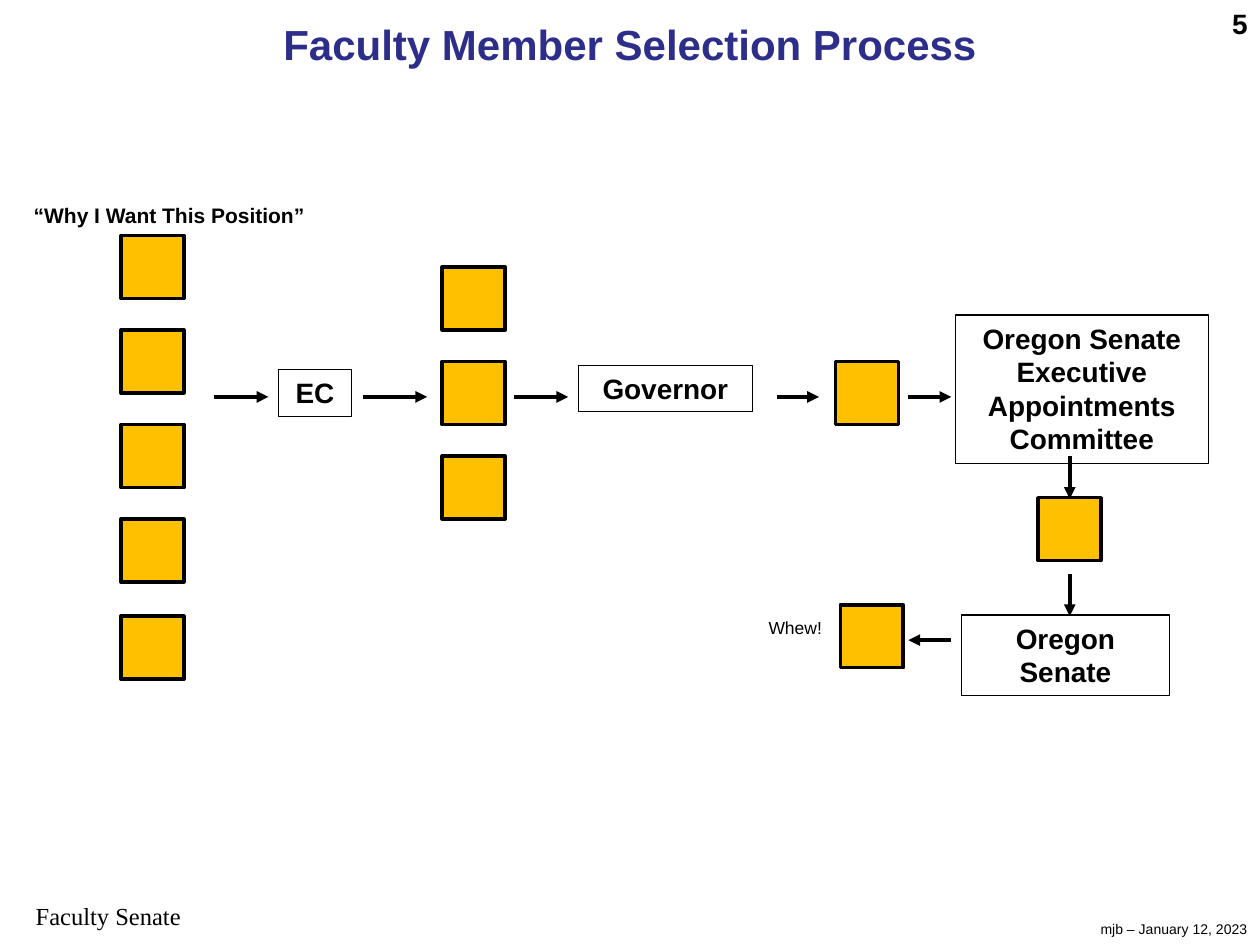
"""Build the faculty member selection process slide."""
from dataclasses import dataclass
from typing import Any, NamedTuple

from pptx import Presentation
from pptx.dml.color import RGBColor
from pptx.enum.shapes import MSO_CONNECTOR as Connector, MSO_SHAPE as Preset
from pptx.enum.text import MSO_ANCHOR as Anchor, MSO_AUTO_SIZE as AutoSize, PP_ALIGN as Align
from pptx.oxml.ns import qn
from pptx.util import Pt
from lxml.etree import SubElement


@dataclass(frozen=True)
class Theme:
    """Colours, fonts, type sizes and line widths of the slide."""
    ink: RGBColor = RGBColor(0x00, 0x00, 0x00)
    title: RGBColor = RGBColor(0x2D, 0x2D, 0x8A)
    candidate: RGBColor = RGBColor(0xFF, 0xC0, 0x00)
    sans: str = "Arial"
    serif: str = "Times New Roman"
    title_size: float = 24
    stage_size: float = 16
    footer_size: float = 14
    caption_size: float = 12
    remark_size: float = 10
    date_size: float = 8
    candidate_line: float = 2
    stage_line: float = 0.75
    arrow_line: float = 2.25


THEME = Theme()
CANDIDATE_SIDE = 36
CANDIDATE_PITCH = 54
FLOW_Y = 226.8
DOWN_X = 611.3


class Frame(NamedTuple):
    """A rectangle in points."""
    left: float
    top: float
    width: float
    height: float


class Label(NamedTuple):
    """A text with its frame and format."""
    text: str
    frame: Frame
    size: float = THEME.stage_size
    align: Align = Align.CENTER
    bold: bool = True
    font: str = THEME.sans
    color: RGBColor = THEME.ink


class CandidateColumn(NamedTuple):
    """Evenly spaced candidate squares, one below the other."""
    left: float
    top: float
    count: int = 1


class Arrow(NamedTuple):
    """A straight arrow between two points."""
    begin: tuple[float, float]
    end: tuple[float, float]


TITLE = Label("Faculty Member Selection Process", Frame(146.9, 7.2, 426.2, 36),
              THEME.title_size, color=THEME.title)

TEXTS = [
    Label("mjb – January 12, 2023", Frame(599.8, 522.7, 120.2, 17.3), THEME.date_size, Align.RIGHT, False),
    Label("5", Frame(671.8, 0, 48.2, 26.6), align=Align.RIGHT),
    Label("Faculty Senate", Frame(-2.2, 511.2, 128.2, 24.5), THEME.footer_size, bold=False, font=THEME.serif),
    Label("Whew!", Frame(398.9, 349.2, 77.8, 19.4), THEME.remark_size, Align.RIGHT, False),
    Label("“Why I Want This Position”", Frame(12.2, 112.3, 171.4, 21.6), THEME.caption_size, Align.LEFT),
]

STAGES = [
    Label("EC", Frame(159.1, 211.3, 41.8, 26.6)),
    Label("Governor", Frame(330.5, 208.8, 99.4, 26.6)),
    Label("Oregon Senate Executive Appointments\vCommittee", Frame(545.8, 180, 144.7, 85)),
    Label("Oregon Senate", Frame(549.4, 351.4, 118.8, 46.1)),
]

CANDIDATES = [
    CandidateColumn(69.1, 134.6, 4),
    CandidateColumn(69.1, 352.1),
    CandidateColumn(252.7, 152.6, 3),
    CandidateColumn(477.4, 206.6),
    CandidateColumn(593.3, 284.4),
    CandidateColumn(480.2, 345.6),
]

FLOW_SPANS = [(122.4, 153.4), (207.4, 244.1), (293.8, 324.7), (444.2, 468), (519.1, 543.6)]
DOWN_SPANS = [(260.6, 285.1), (328.3, 352.1)]
ARROWS = [
    *(Arrow((start, FLOW_Y), (stop, FLOW_Y)) for start, stop in FLOW_SPANS),
    *(Arrow((DOWN_X, start), (DOWN_X, stop)) for start, stop in DOWN_SPANS),
    Arrow((543.6, 365.8), (519.1, 365.8)),
]


def apply_format(target: Any, values: dict[str, Any]) -> None:
    """Set each named attribute of the target."""
    for name, value in values.items():
        setattr(target, name, value)


def write_label(shape: Any, label: Label) -> None:
    """Place the label's text in the shape and format it."""
    apply_format(shape, {name: Pt(value) for name, value in label.frame._asdict().items()})
    text_frame = shape.text_frame
    apply_format(text_frame, {"word_wrap": True, "auto_size": AutoSize.NONE, "vertical_anchor": Anchor.TOP})
    paragraph = text_frame.paragraphs[0]
    paragraph.text = label.text
    paragraph.alignment = label.align
    for run in paragraph.runs:
        apply_format(run.font, {"name": label.font, "size": Pt(label.size), "bold": label.bold})
        run.font.color.rgb = label.color


def add_rectangle(slide: Any, frame: Frame, line_width: float, fill: RGBColor | None = None) -> Any:
    """Add an outlined rectangle, filled when a colour is given."""
    shape = slide.shapes.add_shape(Preset.RECTANGLE, *map(Pt, frame))
    shape.shadow.inherit = False
    if fill is None:
        shape.fill.background()
    else:
        shape.fill.solid()
        shape.fill.fore_color.rgb = fill
    shape.line.color.rgb = THEME.ink
    shape.line.width = Pt(line_width)
    return shape


def add_candidates(slide: Any, column: CandidateColumn) -> None:
    """Add one column of candidate squares."""
    for index in range(column.count):
        top = column.top + index * CANDIDATE_PITCH
        frame = Frame(column.left, top, CANDIDATE_SIDE, CANDIDATE_SIDE)
        add_rectangle(slide, frame, THEME.candidate_line, THEME.candidate)


def add_arrow(slide: Any, arrow: Arrow) -> None:
    """Add a connector with a triangular head at its end."""
    connector = slide.shapes.add_connector(Connector.STRAIGHT, *map(Pt, arrow.begin + arrow.end))
    connector.line.color.rgb = THEME.ink
    connector.line.width = Pt(THEME.arrow_line)
    SubElement(connector.line._get_or_add_ln(), qn("a:tailEnd"), type="triangle")
    SubElement(connector._element.spPr, qn("a:effectLst"))


def main() -> None:
    """Build and save the presentation."""
    presentation = Presentation()
    apply_format(presentation, {"slide_width": Pt(720), "slide_height": Pt(540)})
    slide = presentation.slides.add_slide(presentation.slide_layouts[5])
    write_label(slide.shapes.title, TITLE)
    for label in TEXTS:
        write_label(slide.shapes.add_textbox(*map(Pt, label.frame)), label)
    for column in CANDIDATES:
        add_candidates(slide, column)
    for label in STAGES:
        write_label(add_rectangle(slide, label.frame, THEME.stage_line), label)
    for arrow in ARROWS:
        add_arrow(slide, arrow)
    presentation.save("out.pptx")


if __name__ == "__main__":
    main()
